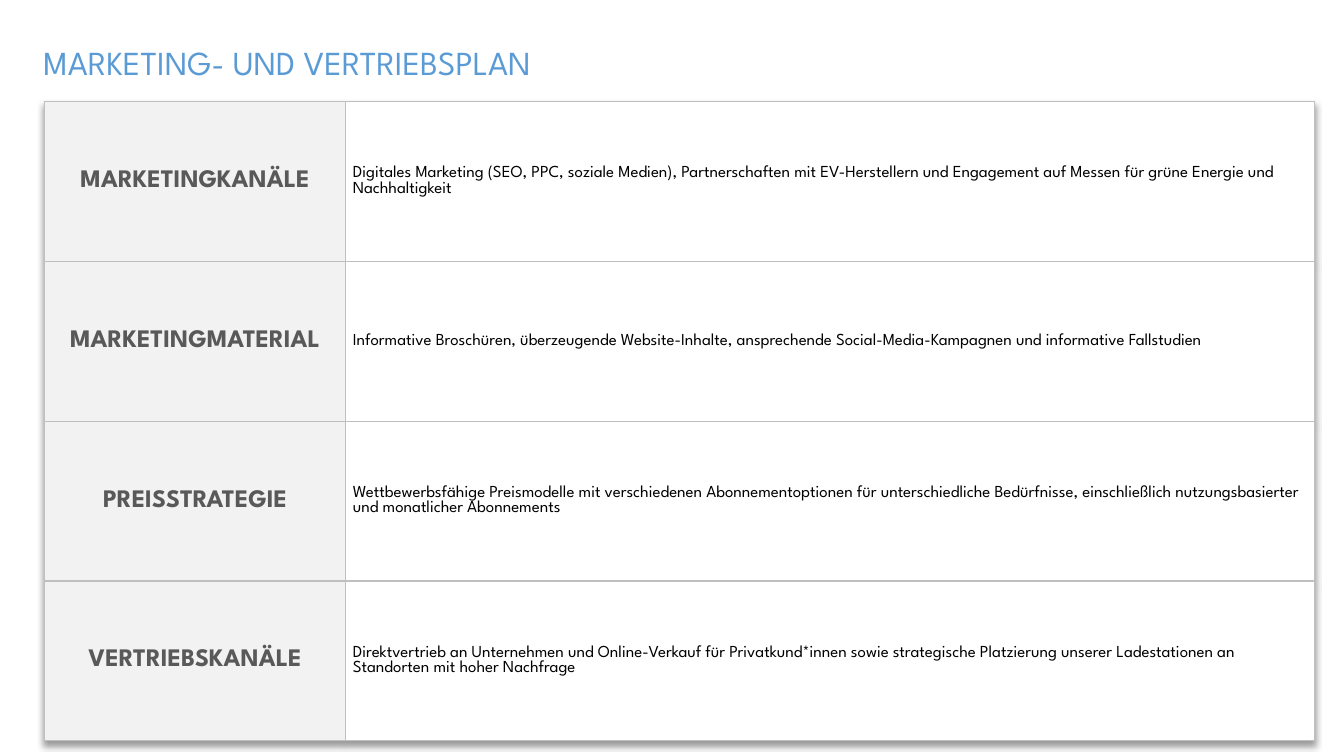
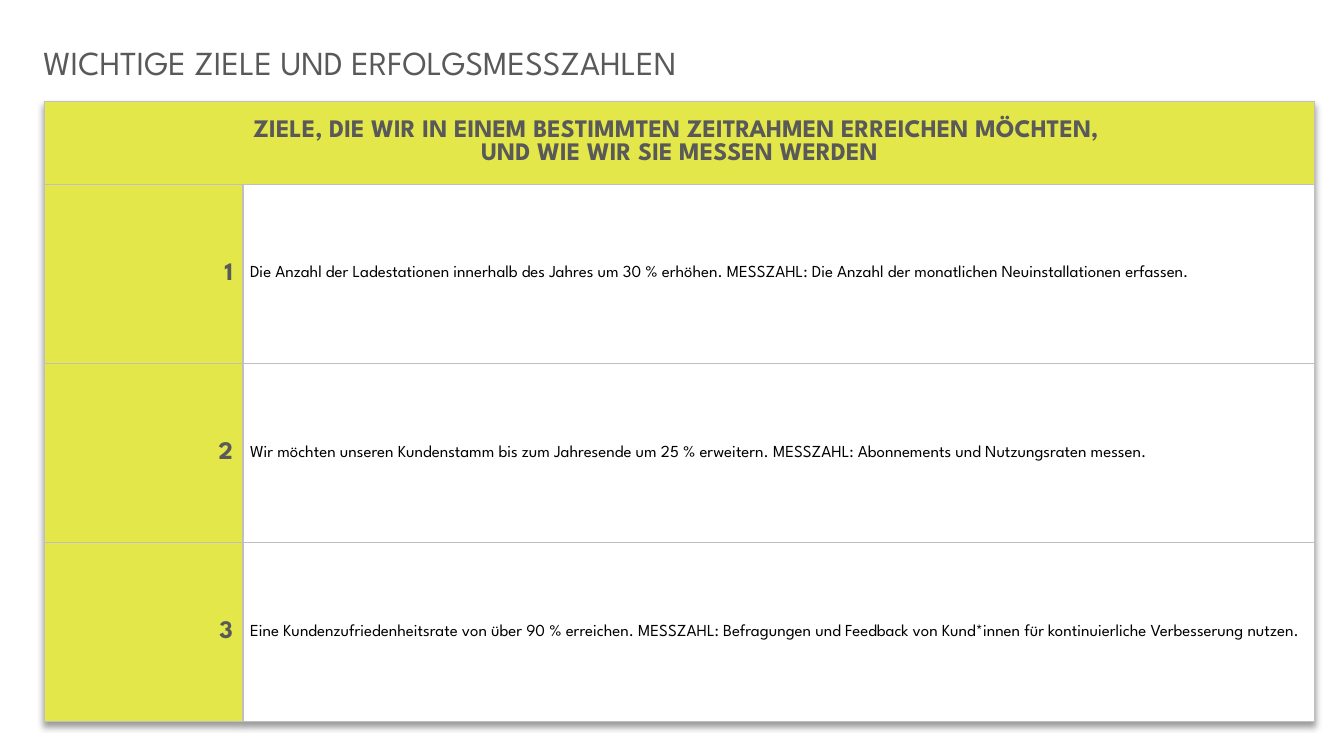
from lxml.etree import SubElement
from pptx import Presentation
from pptx.dml.color import RGBColor
from pptx.enum.text import MSO_ANCHOR, MSO_AUTO_SIZE, PP_ALIGN
from pptx.oxml import parse_xml
from pptx.oxml.ns import nsdecls, qn
from pptx.util import Inches, Pt

# Shared look
FONT = "League Spartan"
BLUE, GREY, BLACK, WHITE = "5B9BD5", "595959", "000000", "FFFFFF"
PALE, LIME, RULE = "F2F2F2", "E3E749", "BFBFBF"
LEFT, TOP, WIDE = 0.44, 1.01, 12.6
SHADOW = f"""<a:effectLst {nsdecls("a")}>
  <a:outerShdw blurRad="50800" dist="38100" dir="5400000" algn="t" rotWithShape="0">
    <a:srgbClr val="{BLACK}"><a:alpha val="40000"/></a:srgbClr>
  </a:outerShdw>
</a:effectLst>"""

# Slide content: title, its colour, label fill, label align, label width,
# table height, header height, header text, rows
PLANS = [
    ("MARKETING- UND VERTRIEBSPLAN", BLUE, PALE, PP_ALIGN.CENTER, 2.99, 6.34, 0, "", [
        ("MARKETINGKANÄLE", "Digitales Marketing (SEO, PPC, soziale Medien), Partnerschaften mit "
         "EV-Herstellern und Engagement auf Messen für grüne Energie und Nachhaltigkeit"),
        ("MARKETINGMATERIAL", "Informative Broschüren, überzeugende Website-Inhalte, ansprechende "
         "Social-Media-Kampagnen und informative Fallstudien"),
        ("PREISSTRATEGIE", "Wettbewerbsfähige Preismodelle mit verschiedenen Abonnementoptionen für "
         "unterschiedliche Bedürfnisse, einschließlich nutzungsbasierter und monatlicher Abonnements"),
        ("VERTRIEBSKANÄLE", "Direktvertrieb an Unternehmen und Online-Verkauf für Privatkund*innen "
         "sowie strategische Platzierung unserer Ladestationen an Standorten mit hoher Nachfrage"),
    ]),
    ("WICHTIGE ZIELE UND ERFOLGSMESSZAHLEN", GREY, LIME, PP_ALIGN.RIGHT, 1.97, 6.15, 0.82,
     "ZIELE, DIE WIR IN EINEM BESTIMMTEN ZEITRAHMEN ERREICHEN MÖCHTEN, \vUND WIE WIR SIE MESSEN WERDEN", [
        ("1", "Die Anzahl der Ladestationen innerhalb des Jahres um 30 % erhöhen. "
         "MESSZAHL: Die Anzahl der monatlichen Neuinstallationen erfassen."),
        ("2", "Wir möchten unseren Kundenstamm bis zum Jahresende um 25 % erweitern. "
         "MESSZAHL: Abonnements und Nutzungsraten messen."),
        ("3", "Eine Kundenzufriedenheitsrate von über 90 % erreichen. MESSZAHL: Befragungen "
         "und Feedback von Kund*innen für kontinuierliche Verbesserung nutzen."),
    ]),
]


def write(frame, text, size, color, bold=False, align=PP_ALIGN.LEFT):
    para = frame.paragraphs[0]
    para.text = text
    para.alignment = align
    for run in para.runs:
        font = run.font
        font.name, font.size, font.bold = FONT, Pt(size), bold
        font.color.rgb = RGBColor.from_string(color)


def paint(cell, color):
    cell.vertical_anchor = MSO_ANCHOR.MIDDLE
    props = cell._tc.get_or_add_tcPr()
    for side in ("a:lnL", "a:lnR", "a:lnT", "a:lnB"):
        line = SubElement(props, qn(side), w=str(Pt(1)))
        SubElement(SubElement(line, qn("a:solidFill")), qn("a:srgbClr"), val=RULE)
    cell.fill.solid()
    cell.fill.fore_color.rgb = RGBColor.from_string(color)


deck = Presentation()
deck.slide_width, deck.slide_height = Inches(13.33), Inches(7.5)

for name, tint, fill, align, label, high, head, banner, rows in PLANS:
    slide = deck.slides.add_slide(deck.slide_layouts[5])

    # Title
    title = slide.shapes.title
    title.left, title.top = Inches(0.33), Inches(0.35)
    title.width, title.height = Inches(8.08), Inches(0.5)
    frame = title.text_frame
    frame.auto_size = MSO_AUTO_SIZE.NONE
    frame.vertical_anchor = MSO_ANCHOR.BOTTOM
    frame.margin_bottom = Inches(0.03)
    write(frame, name, 24, tint)

    # Table grid: optional header, then equal rows
    first = 1 if banner else 0
    table = slide.shapes.add_table(first + len(rows), 2, Inches(LEFT), Inches(TOP),
                                   Inches(WIDE), Inches(high)).table
    table.first_row = table.horz_banding = False
    table._tbl.tblPr.insert(0, parse_xml(SHADOW))
    table.columns[0].width = Inches(label)
    table.columns[1].width = Inches(WIDE - label)
    for row in table.rows:
        row.height = Inches((high - head) / len(rows))

    # Header across both columns
    if banner:
        table.rows[0].height = Inches(head)
        table.cell(0, 0).merge(table.cell(0, 1))
        for cell in table.rows[0].cells:
            paint(cell, fill)
        write(table.cell(0, 0).text_frame, banner, 18, GREY, True, PP_ALIGN.CENTER)

    # Label and text of each row
    for num, (key, text) in enumerate(rows, first):
        left, right = table.cell(num, 0), table.cell(num, 1)
        paint(left, fill)
        write(left.text_frame, key, 18, GREY, True, align)
        paint(right, WHITE)
        right.margin_left = right.margin_right = Inches(0.07)
        right.margin_top = right.margin_bottom = 0
        write(right.text_frame, text, 12, BLACK)

deck.save("out.pptx")
